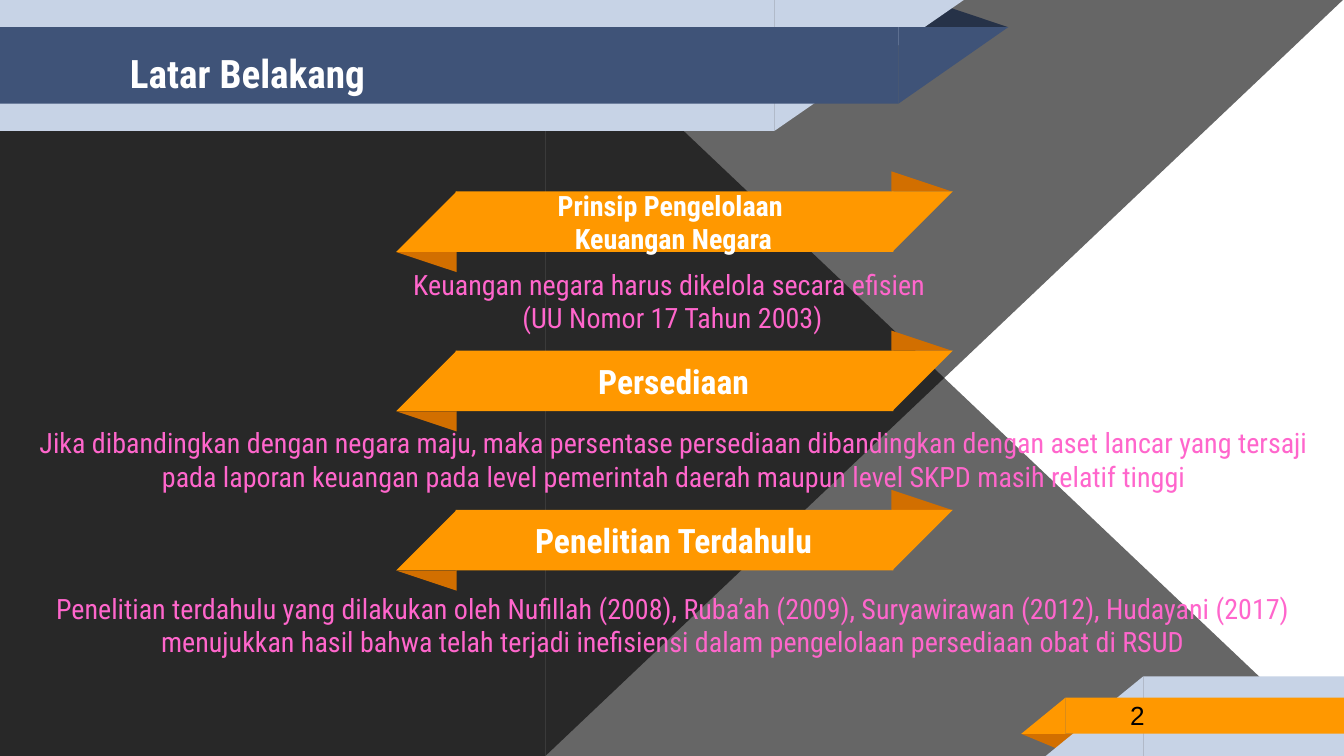
from lxml import etree
from pptx import Presentation
from pptx.dml.color import RGBColor
from pptx.enum.shapes import MSO_SHAPE
from pptx.enum.text import MSO_ANCHOR, PP_ALIGN
from pptx.oxml.ns import qn
from pptx.util import Inches, Pt

RECT, CORNER, TRIANGLE = MSO_SHAPE.RECTANGLE, MSO_SHAPE.RIGHT_TRIANGLE, MSO_SHAPE.ISOSCELES_TRIANGLE
COLORS = {
    "black": "000000", "white": "FFFFFF", "pink": "FF66CC",
    "orange": "FF9800", "dark orange": "D26F00",
    "pale blue": "C7D3E6", "blue": "3F5378", "navy": "263248",
}


def add_piece(shapes, kind, left, top, width, height, color, *, rotation=0, flip=None, apex=None, opacity=None):
    """Add a borderless shape; flip is "flipH" or "flipV", opacity is in percent."""
    piece = shapes.add_shape(kind, Inches(left), Inches(top), Inches(width), Inches(height))
    piece.shadow.inherit = False
    piece.line.fill.background()
    piece.fill.solid()
    piece.fill.fore_color.rgb = RGBColor.from_string(COLORS[color])
    piece.rotation = rotation
    if flip:
        piece.element.spPr.xfrm.set(flip, "1")
    if apex is not None:
        piece.adjustments[0] = apex
    if opacity is not None:
        tint = piece.element.spPr.find(".//" + qn("a:srgbClr"))
        etree.SubElement(tint, qn("a:alpha")).set("val", str(opacity * 1000))


def add_text(shapes, lines, left, top, width, height, *, size, color, font="Roboto Condensed",
             bold=False, align=PP_ALIGN.CENTER):
    box = shapes.add_textbox(Inches(left), Inches(top), Inches(width), Inches(height))
    frame = box.text_frame
    frame.word_wrap = True
    frame.vertical_anchor = MSO_ANCHOR.MIDDLE
    frame.margin_left = frame.margin_right = frame.margin_top = frame.margin_bottom = Inches(0.1)
    for index, line in enumerate(lines):
        para = frame.add_paragraph() if index else frame.paragraphs[0]
        para.alignment = align
        span = para.add_run()
        span.text = line
        span.font.name = font
        span.font.size = Pt(size)
        span.font.bold = bold
        span.font.color.rgb = RGBColor.from_string(COLORS[color])


deck = Presentation()
deck.slide_width, deck.slide_height = Inches(13.33), Inches(7.5)
page = deck.slides.add_slide(deck.slide_layouts[6])

# Two translucent layers whose diagonals cross
for flip in ("flipV", None):
    layer = page.shapes.add_group_shape().shapes
    add_piece(layer, RECT, -0.01, 0, 5.42, 7.5, "black", opacity=60)
    add_piece(layer, CORNER, 5.41, 0, 7.91, 7.5, "black", flip=flip, opacity=60)

# Title banner
banner = page.shapes.add_group_shape().shapes
add_piece(banner, TRIANGLE, 8.9, 0.02, 1.1, 0.25, "navy", apex=0.324)
for top, body, tip, height, color in ((0, 7.68, 1.88, 1.3, "pale blue"), (0.27, 8.91, 1.09, 0.76, "blue")):
    add_piece(banner, RECT, 0, top, body, height, color)
    add_piece(banner, CORNER, body, top, tip, height, color, flip="flipV")
add_text(page.shapes, ["Latar Belakang"], 1.19, 0.27, 7.67, 0.91,
         size=28, color="white", bold=True, align=PP_ALIGN.LEFT)

# Page number banner
footer = page.shapes.add_group_shape().shapes
add_piece(footer, TRIANGLE, 10.13, 7.28, 0.57, 0.16, "dark orange", rotation=180, apex=0.324)
for left, top, tip, height, color in ((10.36, 6.71, 0.98, 0.8, "pale blue"), (10.13, 6.92, 0.44, 0.36, "orange")):
    add_piece(footer, RECT, left + tip, top, 13.34 - left - tip, height, color)
    add_piece(footer, CORNER, left, top, tip, height, color, flip="flipH")
add_text(page.shapes, ["2"], 11.11, 6.86, 2.17, 0.46,
         size=18.7, color="black", font="Arial", align=PP_ALIGN.LEFT)

# Ribbons: heading lines, heading size, body lines, body place
topics = [
    (["Prinsip Pengelolaan ", "Keuangan Negara"], 20,
     ["Keuangan negara harus dikelola secara efisien ", "(UU Nomor 17 Tahun 2003)"],
     (-0.06, 2.68, 13.46, 0.61)),
    (["Persediaan"], 24,
     ["Jika dibandingkan dengan negara maju, maka persentase persediaan dibandingkan dengan aset lancar "
      "yang tersaji pada laporan keuangan pada level pemerintah daerah maupun level SKPD masih relatif tinggi"],
     (0.02, 4.26, 13.33, 0.6)),
    (["Penelitian Terdahulu"], 24,
     ["Penelitian terdahulu yang dilakukan oleh Nufillah (2008), Ruba’ah (2009), Suryawirawan (2012), "
      "Hudayani (2017) menujukkan hasil bahwa telah terjadi inefisiensi dalam pengelolaan persediaan obat di RSUD"],
     (0, 5.85, 13.35, 0.7)),
]
for index, (heading, heading_size, body, place) in enumerate(topics):
    top = 1.9 + 1.58 * index
    ribbon = page.shapes.add_group_shape().shapes
    add_piece(ribbon, TRIANGLE, 8.84, top - 0.2, 0.6, 0.2, "dark orange", apex=0)
    add_piece(ribbon, RECT, 4.52, top, 4.34, 0.6, "orange")
    add_piece(ribbon, CORNER, 8.85, top, 0.6, 0.6, "orange", flip="flipV")
    add_piece(ribbon, CORNER, 3.93, top, 0.6, 0.6, "orange", flip="flipH")
    add_piece(ribbon, TRIANGLE, 3.93, top + 0.6, 0.6, 0.2, "dark orange", rotation=180, apex=0)
    add_text(ribbon, heading, 4.54, top + 0.01, 4.28, 0.58, size=heading_size, color="white", bold=True)
    add_text(page.shapes, body, *place, size=20, color="pink")

deck.save("out.pptx")
